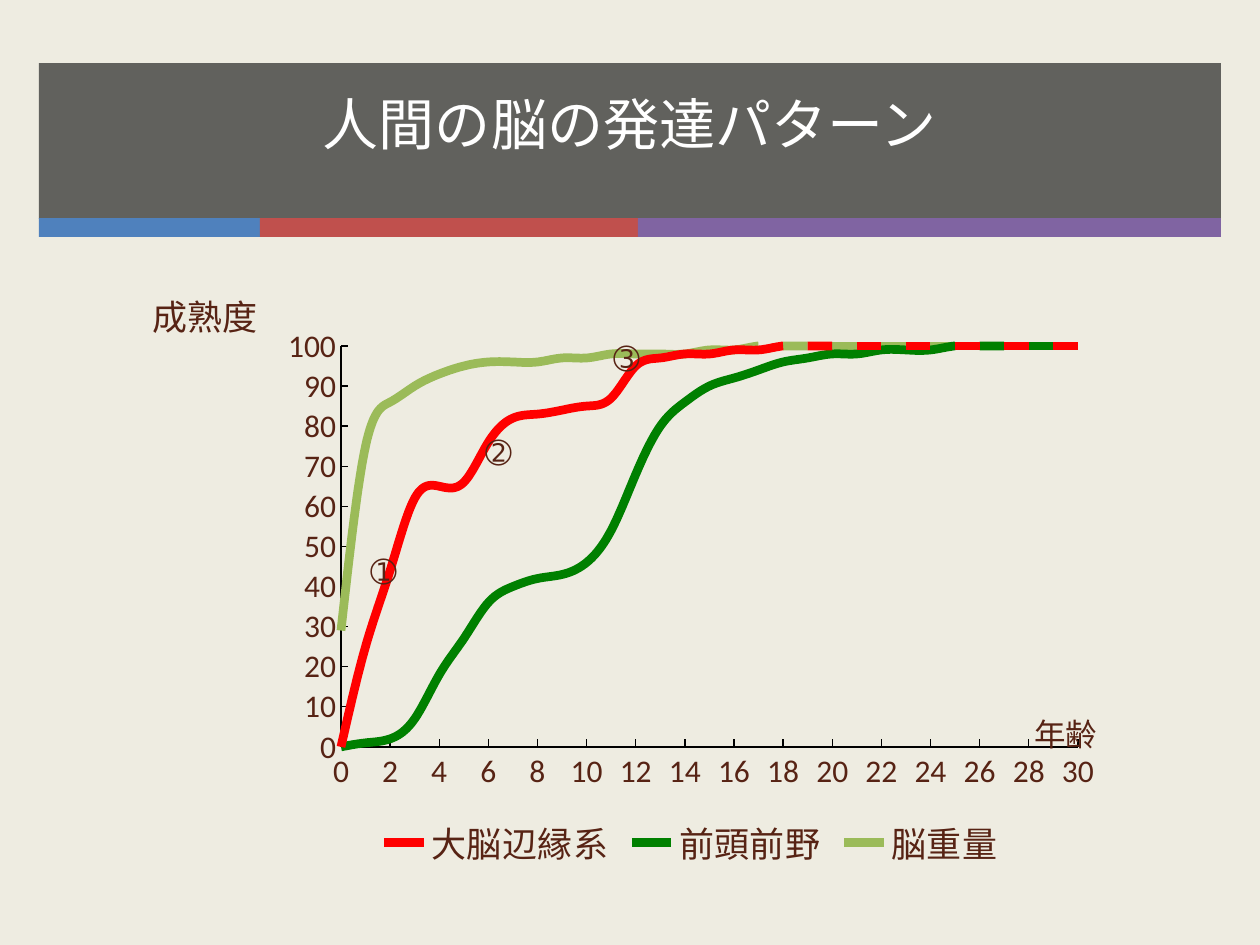
from dataclasses import dataclass
from typing import NamedTuple

from lxml.etree import SubElement
from pptx import Presentation
from pptx.chart.data import XyChartData
from pptx.dml.color import RGBColor
from pptx.enum.chart import XL_CHART_TYPE, XL_LEGEND_POSITION, XL_TICK_MARK
from pptx.enum.shapes import MSO_SHAPE
from pptx.enum.text import MSO_ANCHOR, MSO_AUTO_SIZE, PP_ALIGN
from pptx.oxml.ns import qn
from pptx.util import Emu, Pt

SCALE = 914400 / 126


@dataclass(frozen=True)
class Theme:
    font: str = "Calibri"
    paper: str = "EEECE1"
    band: str = "262626"
    white: str = "FFFFFF"
    ink: str = "572314"
    axis: str = "000000"
    title: int = 32
    large: int = 20
    small: int = 18
    curve: float = 5
    thin: float = 0.75


class Box(NamedTuple):
    left: int
    top: int
    width: int
    height: int


class Stripe(NamedTuple):
    left: int
    width: int
    color: str


class Label(NamedTuple):
    text: str
    box: Box
    size: int
    wrap: bool = False


class Curve(NamedTuple):
    name: str
    color: str
    values: list[int]
    hidden: range


THEME = Theme()
FRAME = Box(271, 316, 840, 559)
PLOT = Box(341, 346, 737, 401)
STRIPES = [
    Stripe(39, 221, "4F81BD"),
    Stripe(260, 378, "C0504D"),
    Stripe(638, 583, "8064A2"),
]
LABELS = [
    Label("➀", Box(358, 546, 57, 50), THEME.small),
    Label("➁", Box(473, 427, 57, 50), THEME.small),
    Label("➂", Box(601, 333, 57, 50), THEME.small),
    Label("成熟度", Box(140, 289, 131, 55), THEME.large),
    Label("年齢", Box(1022, 709, 102, 50), THEME.small, True),
]
CURVES = [
    Curve("大脳辺縁系", "FF0000",
          [0, 25, 44, 62, 65, 66, 76, 82, 83, 84, 85, 87, 95, 97, 98, 98, 99, 99]
          + [100] * 13, range(21, 31, 2)),
    Curve("前頭前野", "008000",
          [0, 1, 2, 7, 18, 27, 36, 40, 42, 43, 46, 54, 68, 80, 86, 90, 92, 94,
           96, 97, 98, 98, 99, 99, 99] + [100] * 6, range(0)),
    Curve("脳重量", "9BBB59",
          [29, 75, 86, 90, 93, 95, 96, 96, 96, 97, 97, 98, 98, 98, 98, 99, 99]
          + [100] * 14, range(21, 31)),
]


def px(count: int) -> Emu:
    return Emu(round(count * SCALE))


def place(box: Box) -> list[Emu]:
    return [px(side) for side in box]


def tint(color: str) -> RGBColor:
    return RGBColor.from_string(color)


def style(font, size: int, color: str) -> None:
    font.name = THEME.font
    font.size = Pt(size)
    font.color.rgb = tint(color)


def draw_bar(shapes, box: Box, color: str):
    bar = shapes.add_shape(MSO_SHAPE.RECTANGLE, *place(box))
    bar.shadow.inherit = False
    bar.fill.solid()
    bar.fill.fore_color.rgb = tint(color)
    bar.line.fill.background()
    return bar


def draw_head(slide) -> None:
    band = draw_bar(slide.shapes, Box(39, 63, 1182, 156), THEME.band)
    shade = band._element.xpath("./p:spPr/a:solidFill/a:srgbClr")[0]
    SubElement(shade, qn("a:alpha")).set("val", "70000")
    group = slide.shapes.add_group_shape()
    for stripe in STRIPES:
        draw_bar(group.shapes, Box(stripe.left, 218, stripe.width, 19), stripe.color)

    title = slide.shapes.title
    title.left, title.top, title.width, title.height = place(Box(39, 57, 1182, 133))
    frame = title.text_frame
    frame.text = "人間の脳の発達パターン"
    frame.vertical_anchor = MSO_ANCHOR.MIDDLE
    line = frame.paragraphs[0]
    line.alignment = PP_ALIGN.CENTER
    style(line.runs[0].font, THEME.title, THEME.white)
    group._element.addnext(title._element)


def draw_label(slide, label: Label) -> None:
    frame = slide.shapes.add_textbox(*place(label.box)).text_frame
    frame.text = label.text
    frame.word_wrap = label.wrap
    frame.auto_size = MSO_AUTO_SIZE.SHAPE_TO_FIT_TEXT
    style(frame.paragraphs[0].runs[0].font, label.size, THEME.ink)


def set_axis(axis, top: int, step: int) -> None:
    axis.minimum_scale = 0
    axis.maximum_scale = top
    axis.major_unit = step
    axis.has_major_gridlines = False
    axis.major_tick_mark = XL_TICK_MARK.INSIDE
    axis.minor_tick_mark = XL_TICK_MARK.NONE
    axis.format.line.color.rgb = tint(THEME.axis)
    axis.format.line.width = Pt(THEME.thin)
    style(axis.tick_labels.font, THEME.small, THEME.ink)


def set_plot(chart) -> None:
    area = chart._chartSpace.chart.plotArea
    for old in area.findall(qn("c:layout")):
        area.remove(old)
    layout = SubElement(area, qn("c:layout"))
    area.insert(0, layout)
    manual = SubElement(layout, qn("c:manualLayout"))
    parts = {
        "layoutTarget": "inner",
        "xMode": "edge",
        "yMode": "edge",
        "x": (PLOT.left - FRAME.left) / FRAME.width,
        "y": (PLOT.top - FRAME.top) / FRAME.height,
        "w": PLOT.width / FRAME.width,
        "h": PLOT.height / FRAME.height,
    }
    for name, value in parts.items():
        SubElement(manual, qn(f"c:{name}")).set("val", str(value))


def draw_chart(slide) -> None:
    data = XyChartData()
    for curve in CURVES:
        series = data.add_series(curve.name)
        for age, value in enumerate(curve.values):
            series.add_data_point(age, value)
    kind = XL_CHART_TYPE.XY_SCATTER_SMOOTH_NO_MARKERS
    chart = slide.shapes.add_chart(kind, *place(FRAME), data).chart
    chart.has_title = False
    style(chart.font, THEME.small, THEME.axis)
    set_axis(chart.category_axis, 30, 2)
    set_axis(chart.value_axis, 100, 10)
    set_plot(chart)

    chart.has_legend = True
    chart.legend.position = XL_LEGEND_POSITION.BOTTOM
    chart.legend.include_in_layout = False
    style(chart.legend.font, THEME.large, THEME.ink)

    plot = chart.plots[0]
    plot.vary_by_categories = False
    for series, curve in zip(plot.series, CURVES):
        series.format.line.color.rgb = tint(curve.color)
        series.format.line.width = Pt(THEME.curve)
        series._element.get_or_add_smooth().set("val", "1")
        for age in curve.hidden:
            series.points[age].format.line.fill.background()


def main() -> None:
    deck = Presentation()
    deck.slide_width, deck.slide_height = px(1260), px(945)
    slide = deck.slides.add_slide(deck.slide_layouts[5])
    slide.background.fill.solid()
    slide.background.fill.fore_color.rgb = tint(THEME.paper)
    draw_head(slide)
    draw_chart(slide)
    for label in LABELS:
        draw_label(slide, label)
    deck.save("out.pptx")


if __name__ == "__main__":
    main()
